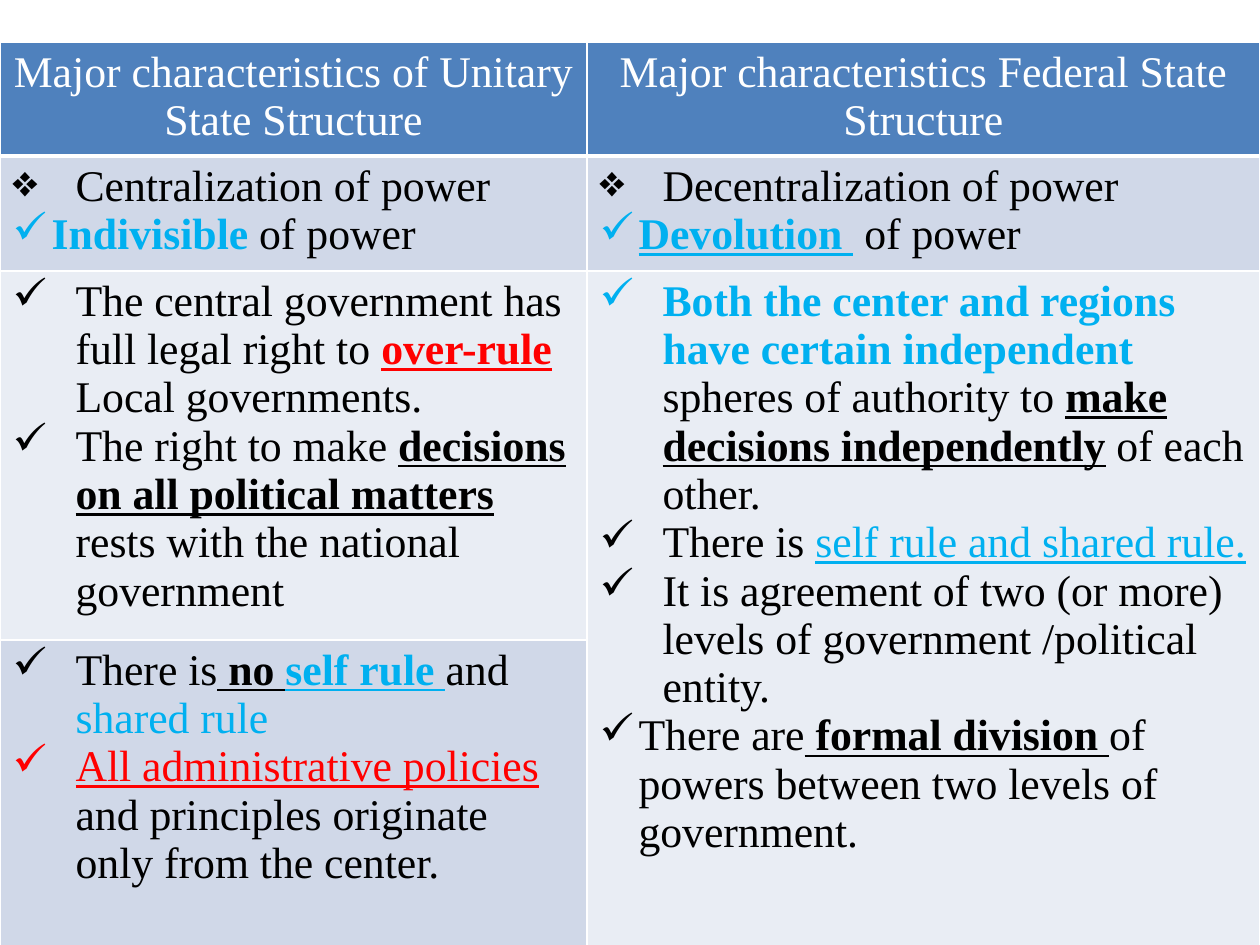
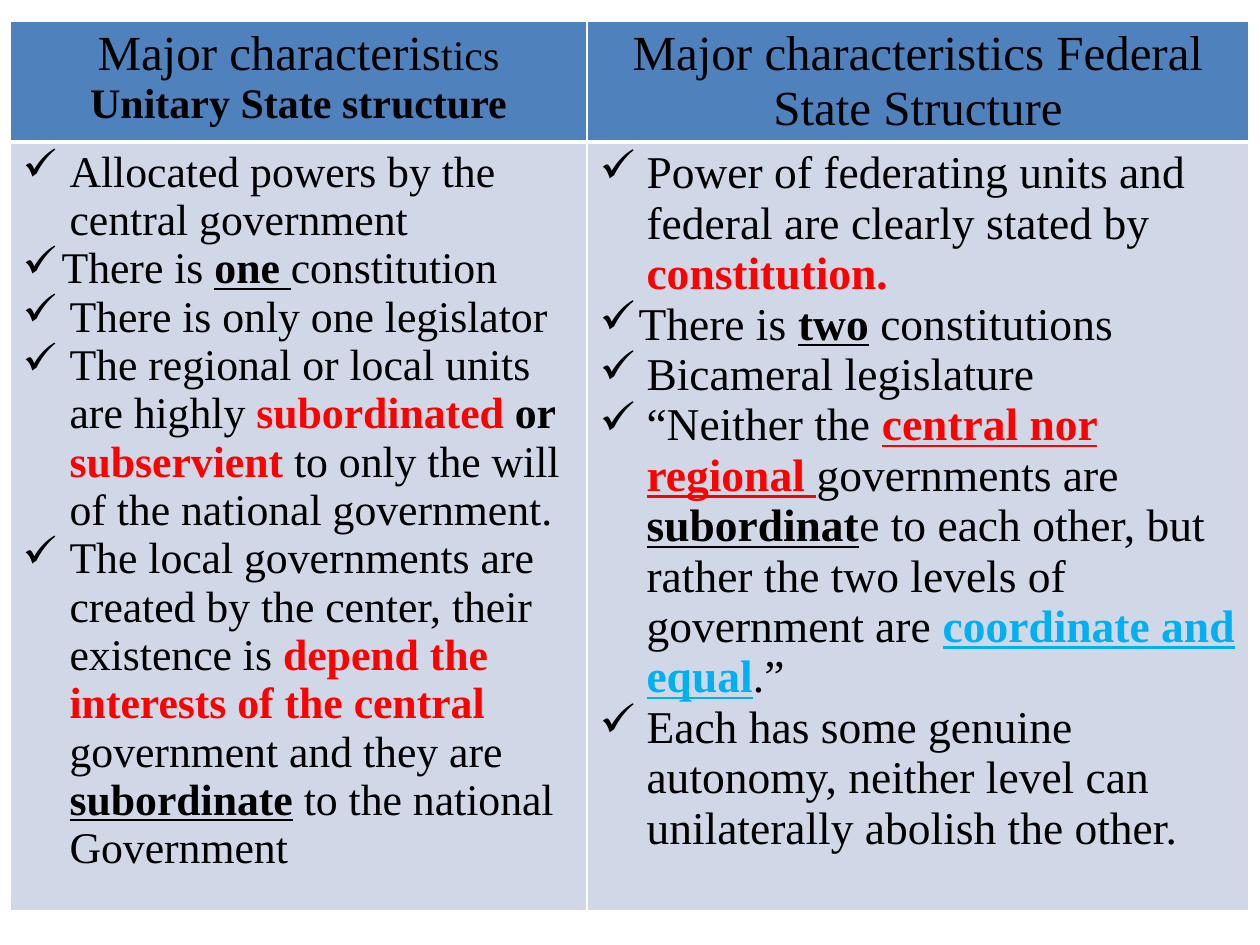
from lxml.etree import SubElement
from pptx import Presentation
from pptx.dml.color import RGBColor
from pptx.enum.text import PP_ALIGN
from pptx.oxml import parse_xml
from pptx.oxml.ns import nsdecls, qn
from pptx.util import Inches, Pt

PX = Inches(1) / 126
FONT = "Times New Roman"
WHITE, BLACK, RED, SKY = "FFFFFF", "000000", "FF0000", "00B0F0"
HEAD, BAND, PALE = "4F81BD", "D0D8E8", "E9EDF4"

# Run formats
PLAIN = {}
BOLD = dict(bold=True)
LINE = dict(bold=True, line=True)
HOT = dict(bold=True, color=RED)
HOTLINE = dict(bold=True, line=True, color=RED)
COOL = dict(bold=True, color=SKY)
COOLLINE = dict(bold=True, line=True, color=SKY)

# Bullets: mark and hanging indent in px
GEM = ("❖", 63)
WIDE = ("✓", 63)
MID = ("✓", 47)
TIGHT = ("✓", 39)


def write(para, text, size=25, color=BLACK, bold=False, line=False):
    run = para.add_run()
    run.text = text
    font = run.font
    font.name, font.size = FONT, Pt(size)
    font.bold, font.underline = bold, line
    font.color.rgb = RGBColor.from_string(color)


def dress(cell, fill, top, low):
    cell.fill.solid()
    cell.fill.fore_color.rgb = RGBColor.from_string(fill)
    sides = (("L", 1), ("R", 1), ("T", top), ("B", low))
    for spot, (side, width) in enumerate(sides):
        cell._tc.get_or_add_tcPr().insert(spot, parse_xml(
            f'<a:ln{side} {nsdecls("a")} w="{Pt(width)}"><a:solidFill>'
            f'<a:srgbClr val="{WHITE}"/></a:solidFill></a:ln{side}>'))


# Each cell: row, column, fill, base size, paragraphs of (bullet, runs)
first = dict(left=0, top=42, cols=(587, 673), rows=(114, 115, 369, 306), cells=[
    (0, 0, HEAD, 25, [
        (None, [("Major characteristics of Unitary State Structure", dict(color=WHITE))])]),
    (0, 1, HEAD, 25, [
        (None, [("Major characteristics Federal State Structure", dict(color=WHITE))])]),
    (1, 0, BAND, 25, [
        (GEM, [("Centralization of power", PLAIN)]),
        (TIGHT, [("Indivisible", COOL), (" of power", PLAIN)])]),
    (1, 1, BAND, 25, [
        (GEM, [("Decentralization of power", PLAIN)]),
        (TIGHT, [("Devolution ", COOLLINE), (" of power", PLAIN)])]),
    (2, 0, PALE, 25, [
        (WIDE, [("The central government has full legal right to ", PLAIN),
                ("over-rule", HOTLINE), (" Local governments.", PLAIN)]),
        (WIDE, [("The right to make ", PLAIN),
                ("decisions on all political matters ", LINE),
                ("rests with the national government", PLAIN)])]),
    (2, 1, PALE, 25, [
        (WIDE, [("Both the center and regions have certain independent", COOL),
                (" spheres of authority to ", PLAIN),
                ("make decisions independently", LINE),
                (" of each other.", PLAIN)]),
        (WIDE, [("There is ", PLAIN),
                ("self rule and shared rule.", dict(color=SKY, line=True))]),
        (WIDE, [("It is agreement of two (or more) levels of government "
                 "/political entity.", PLAIN)]),
        (TIGHT, [("There are", PLAIN), (" formal division ", LINE),
                 ("of powers between two levels of government.", PLAIN)])]),
    (3, 0, BAND, 25, [
        (WIDE, [("There is", PLAIN), (" no ", LINE), ("self rule ", COOLLINE),
                ("and ", PLAIN), ("shared rule", dict(color=SKY))]),
        (WIDE, [("All administrative policies ", dict(color=RED, line=True)),
                ("and principles originate only from the center.", PLAIN)])]),
])

second = dict(left=10, top=21, cols=(577, 662), rows=(119, 769), cells=[
    (0, 0, HEAD, 28, [
        (None, [("Major characteris", PLAIN), ("tics ", dict(size=24)),
                ("Unitary State structure", dict(size=24, bold=True))])]),
    (0, 1, HEAD, 28, [
        (None, [("Major characteristics Federal State Structure", PLAIN)])]),
    (1, 0, BAND, 25, [
        (MID, [("Allocated powers by the central government", PLAIN)]),
        (TIGHT, [("There is ", PLAIN), ("one ", LINE), ("constitution", PLAIN)]),
        (MID, [("There is only one legislator", PLAIN)]),
        (MID, [("The regional or local units are highly ", PLAIN),
               ("subordinated ", HOT), ("or ", BOLD), ("subservient ", HOT),
               ("to only the will of the national government.", PLAIN)]),
        (MID, [("The local governments are created by the center, "
                "their existence is ", PLAIN),
               ("depend the interests of the central ", HOT),
               ("government and they are ", PLAIN), ("subordinate", LINE),
               (" to the national Government", PLAIN)])]),
    (1, 1, BAND, 26, [
        (MID, [("Power of federating units and federal are clearly stated by ", PLAIN),
               ("constitution.", HOT)]),
        (TIGHT, [("There is ", PLAIN), ("two", LINE), (" constitutions", PLAIN)]),
        (MID, [("Bicameral legislature", PLAIN)]),
        (MID, [("“Neither the ", PLAIN), ("central nor regional ", HOTLINE),
               ("governments are ", PLAIN), ("subordinat", LINE),
               ("e to each other, but rather the two levels of government are ", PLAIN),
               ("coordinate and equal", COOLLINE), (".”", PLAIN)]),
        (MID, [("Each has some genuine autonomy, neither level can "
                "unilaterally abolish the other.", PLAIN)])]),
])

deck = Presentation()
deck.slide_width, deck.slide_height = Inches(10), Inches(7.5)

for page in (first, second):
    slide = deck.slides.add_slide(deck.slide_layouts[6])
    cols, rows = page["cols"], page["rows"]
    box = [round(n * PX) for n in (page["left"], page["top"], sum(cols), sum(rows))]
    grid = slide.shapes.add_table(len(rows), len(cols), *box).table
    for col, wide in zip(grid.columns, cols):
        col.width = round(wide * PX)
    for row, high in zip(grid.rows, rows):
        row.height = round(high * PX)

    # Federal cell covers the last two rows
    if len(rows) == 4:
        grid.cell(2, 1).merge(grid.cell(3, 1))

    for r, c, fill, size, paras in page["cells"]:
        cell = grid.cell(r, c)
        dress(cell, fill, 3 if r == 1 else 1, 3 if r == 0 else 1)
        frame = cell.text_frame
        for i, (mark, runs) in enumerate(paras):
            para = frame.add_paragraph() if i else frame.paragraphs[0]
            if mark:
                sign, hang = mark
                props = para._p.get_or_add_pPr()
                props.set("marL", str(round(hang * PX)))
                props.set("indent", str(-round(hang * PX)))
                SubElement(props, qn("a:buChar")).set("char", sign)
            else:
                para.alignment = PP_ALIGN.CENTER
            for text, style in runs:
                write(para, text, **{"size": size, **style})

deck.save("out.pptx")
